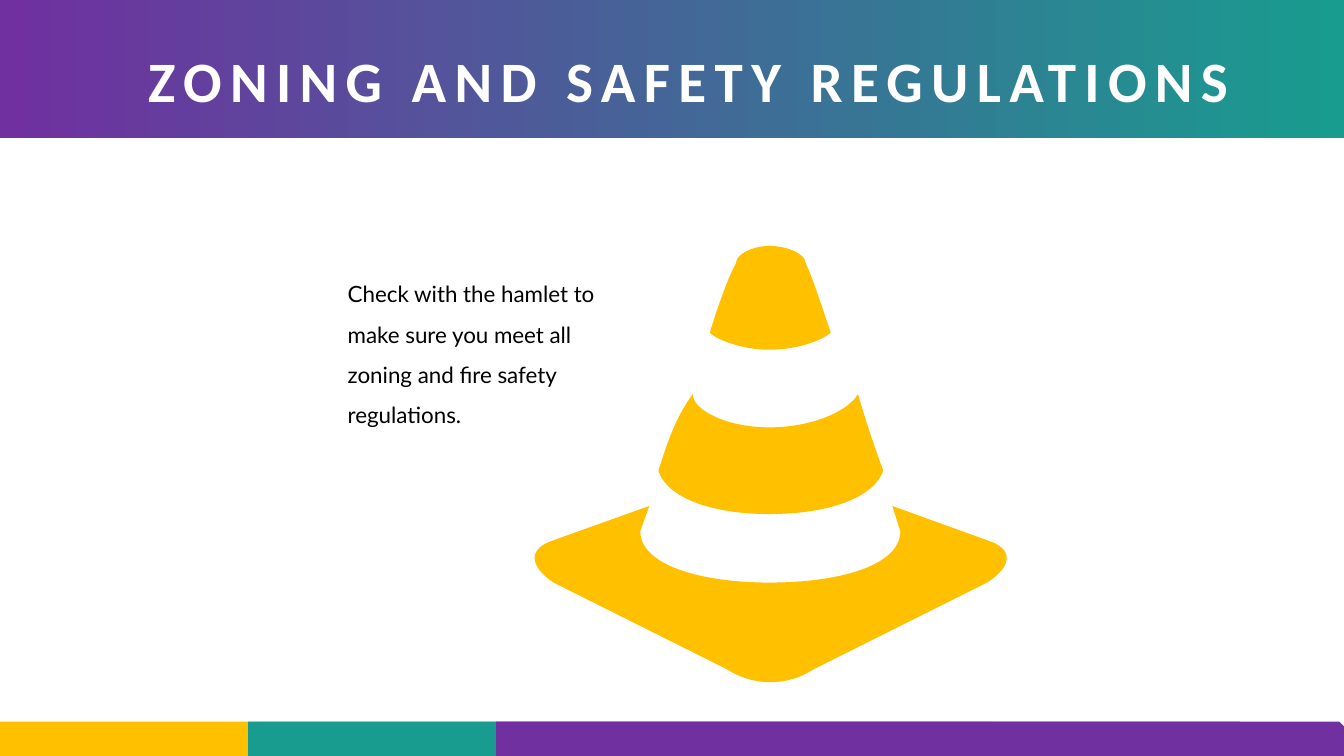
import lxml.etree
import pptx
import pptx.util
import pptx.dml.color
import pptx.enum.shapes
import pptx.enum.text
import pptx.oxml.ns

Inches = pptx.util.Inches
Pt = pptx.util.Pt
RGBColor = pptx.dml.color.RGBColor
MSO_SHAPE = pptx.enum.shapes.MSO_SHAPE

PURPLE = RGBColor(0x70, 0x30, 0xA0)
TEAL = RGBColor(0x18, 0x9C, 0x8F)
AMBER = RGBColor(0xFF, 0xC0, 0x00)
WHITE = RGBColor(0xFF, 0xFF, 0xFF)
BLACK = RGBColor(0x00, 0x00, 0x00)

CONE_MIDDLE = [
    (7.63, 5.1),
    (8.24, 5.1, 8.67, 4.93, 8.76, 4.67),
    (8.67, 4.42, 8.58, 4.16, 8.51, 3.91),
    (8.42, 4.07, 8.07, 4.24, 7.63, 4.24),
    (7.21, 4.24, 6.87, 4.07, 6.87, 3.91),
    (6.69, 4.16, 6.61, 4.42, 6.53, 4.67),
    (6.61, 4.93, 7.04, 5.1, 7.63, 5.1),
]
CONE_TIP = [
    (7.63, 3.47),
    (7.9, 3.47, 8.15, 3.38, 8.24, 3.3),
    (8.15, 3.04, 8.07, 2.78, 7.99, 2.61),
    (7.99, 2.52, 7.81, 2.44, 7.63, 2.44),
    (7.47, 2.44, 7.3, 2.52, 7.3, 2.61),
    (7.21, 2.78, 7.12, 3.04, 7.04, 3.3),
    (7.12, 3.38, 7.38, 3.47, 7.63, 3.47),
]
CONE_BASE = [
    (9.79, 5.36),
    (8.85, 5.02),
    (8.93, 5.27),
    (8.93, 5.61, 8.33, 5.78, 7.63, 5.78),
    (6.96, 5.78, 6.35, 5.61, 6.35, 5.27),
    (6.44, 5.02),
    (5.49, 5.36),
    (5.24, 5.44, 5.24, 5.61, 5.49, 5.78),
    (7.21, 6.64),
    (7.47, 6.81, 7.81, 6.81, 8.07, 6.64),
    (9.79, 5.78),
    (10.05, 5.61, 10.05, 5.44, 9.79, 5.36),
]
CONE_OUTLINES = [CONE_MIDDLE, CONE_TIP, CONE_BASE]


def place(shape, left, top, width, height):
    shape.left, shape.top = Inches(left), Inches(top)
    shape.width, shape.height = Inches(width), Inches(height)


def paint(shape, color):
    shape.shadow.inherit = False
    shape.fill.solid()
    shape.fill.fore_color.rgb = color
    shape.line.fill.background()


def write_text(text_frame, text, *, size, font, color, bold=False,
               line_spacing=1.0, space_before=0, tracking=0,
               auto_size=pptx.enum.text.MSO_AUTO_SIZE.NONE):
    text_frame.word_wrap = True
    text_frame.auto_size = auto_size
    text_frame.vertical_anchor = pptx.enum.text.MSO_ANCHOR.TOP
    paragraph = text_frame.paragraphs[0]
    paragraph.alignment = pptx.enum.text.PP_ALIGN.LEFT
    paragraph.line_spacing = line_spacing
    paragraph.space_before = Pt(space_before)
    run = paragraph.add_run()
    run.text = text
    run.font.size = Pt(size)
    run.font.name = font
    run.font.bold = bold
    run.font.color.rgb = color
    if tracking:
        run.font._element.set("spc", str(tracking * 100))


def add_header_band(slide):
    band = slide.shapes.add_shape(MSO_SHAPE.RECTANGLE, 0, 0, 0, 0)
    place(band, 5.98, -5.98, 1.37, 13.33)
    band.rotation = 90
    paint(band, PURPLE)
    band.fill.gradient()
    band.fill.gradient_angle = 270
    for stop, color, position in zip(
            band.fill.gradient_stops, (TEAL, PURPLE), (0, 1)):
        stop.color.rgb = color
        stop.position = position


def add_title(slide, text):
    title = slide.shapes.title
    slide.shapes._spTree.append(title._element)
    place(title, 1.37, 0.53, 11.47, 0.7)
    write_text(title.text_frame, text, size=40.8, font="Calibri", color=WHITE,
               bold=True, line_spacing=0.8, space_before=10, tracking=6)


def add_footer(slide):
    footer = slide.shapes.add_group_shape()
    for index, (color, width) in enumerate(
            [(AMBER, 9.89), (TEAL, 9.89), (PURPLE, 8.42)]):
        strip = footer.shapes.add_shape(
            MSO_SHAPE.SNIP_1_RECTANGLE, Inches(2.46 * index), Inches(7.16),
            Inches(width), Inches(0.34))
        paint(strip, color)


def add_body(slide, text):
    box = slide.shapes.add_textbox(
        Inches(3.35), Inches(2.6), Inches(2.78), Inches(1.66))
    write_text(box.text_frame, text, size=16, font="Lato", color=BLACK,
               line_spacing=1.5,
               auto_size=pptx.enum.text.MSO_AUTO_SIZE.SHAPE_TO_FIT_TEXT)


def segment_points(segment):
    return [(Inches(x), Inches(y)) for x, y in zip(segment[::2], segment[1::2])]


def bend_segments(shape, outlines):
    qualified = pptx.oxml.ns.qn
    lines = iter(list(shape._element.iter(qualified("a:lnTo"))))
    for outline in outlines:
        for segment in outline[1:]:
            group = [next(lines) for _ in segment[::2]]
            if len(group) == 1:
                continue
            curve = lxml.etree.Element(qualified("a:cubicBezTo"))
            group[0].addprevious(curve)
            for line in group:
                curve.append(line[0])
                line.getparent().remove(line)


def add_cone(slide):
    builder = None
    for outline in CONE_OUTLINES:
        start, *points = [point for segment in outline
                          for point in segment_points(segment)]
        if builder is None:
            builder = slide.shapes.build_freeform(*start)
        else:
            builder.move_to(*start)
        builder.add_line_segments(points, close=True)
    cone = builder.convert_to_shape()
    bend_segments(cone, CONE_OUTLINES)
    paint(cone, AMBER)


def main():
    presentation = pptx.Presentation()
    presentation.slide_width = Inches(13.33)
    presentation.slide_height = Inches(7.5)
    slide = presentation.slides.add_slide(presentation.slide_layouts[5])
    add_header_band(slide)
    add_title(slide, "ZONING AND SAFETY REGULATIONS")
    add_footer(slide)
    add_body(slide, "Check with the hamlet to make sure you meet all zoning "
                    "and fire safety regulations.")
    add_cone(slide)
    presentation.save("out.pptx")


if __name__ == "__main__":
    main()
